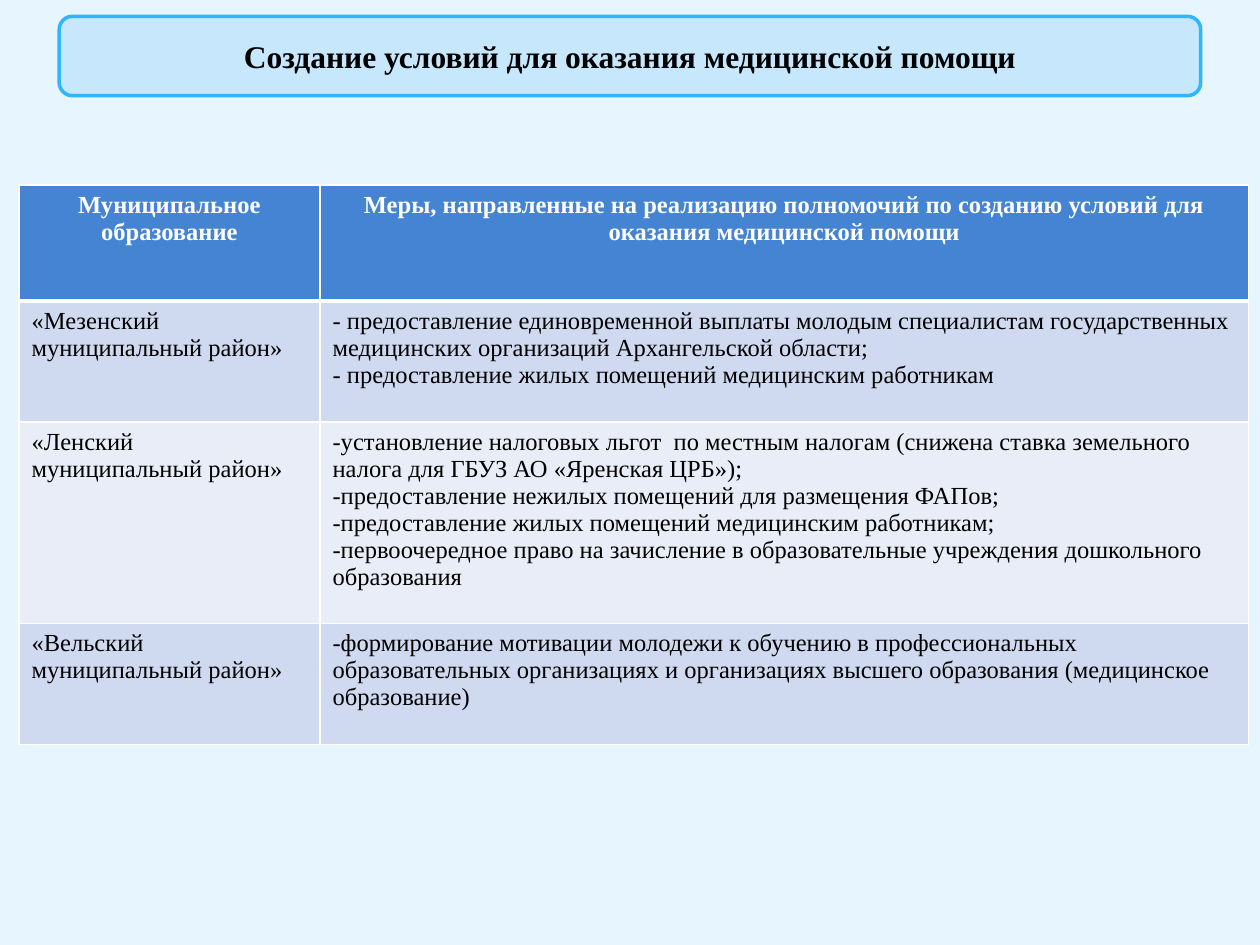
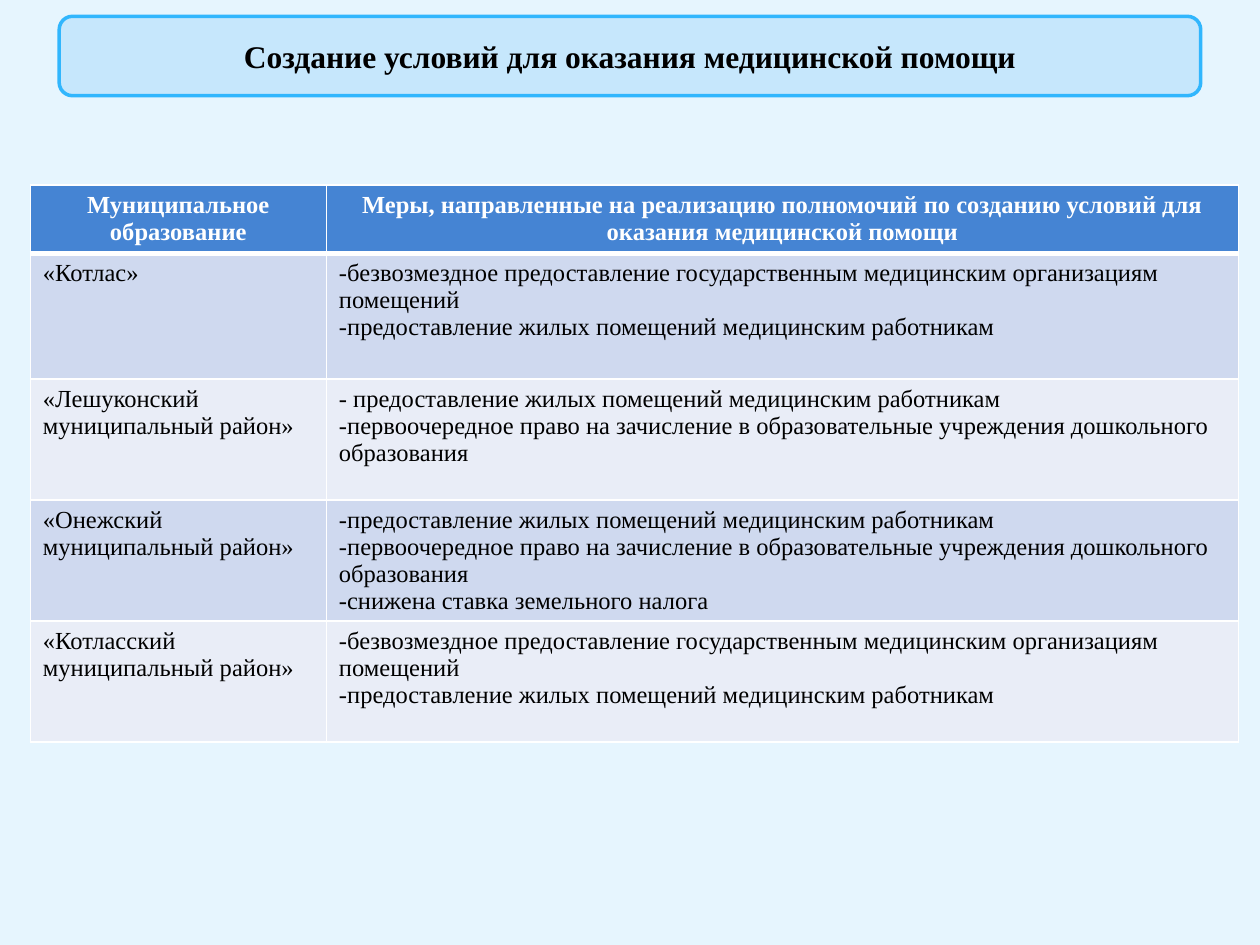
from lxml import etree
from pptx import Presentation
from pptx.dml.color import RGBColor
from pptx.enum.shapes import MSO_SHAPE
from pptx.enum.text import MSO_ANCHOR, MSO_AUTO_SIZE, PP_ALIGN
from pptx.oxml.ns import qn
from pptx.util import Inches, Pt

ROUNDED = MSO_SHAPE.ROUNDED_RECTANGLE
MIDDLE = MSO_ANCHOR.MIDDLE
NO_FIT = MSO_AUTO_SIZE.NONE
CENTER = PP_ALIGN.CENTER
LEFT = PP_ALIGN.LEFT
TITLE_ONLY = 5

TITLE = "Создание условий для оказания медицинской помощи"
HEADERS = [
    "Муниципальное образование",
    "Меры, направленные на реализацию полномочий по созданию условий для оказания медицинской помощи",
]
HOUSING = "предоставление жилых помещений медицинским работникам"
KINDERGARTEN = "-первоочередное право на зачисление в образовательные учреждения дошкольного образования"
PREMISES = "-безвозмездное предоставление государственным медицинским организациям помещений"

SLIDES = [
    {
        "left": 0.15,
        "widths": [2.39, 7.37],
        "heights": [0.92, 0.96, 1.6, 0.96],
        "measures": {
            "«Мезенский муниципальный район»": [
                "- предоставление единовременной выплаты молодым специалистам государственных медицинских организаций Архангельской области;",
                "- " + HOUSING,
            ],
            "«Ленский муниципальный район»": [
                "-установление налоговых льгот  по местным налогам (снижена ставка земельного налога для ГБУЗ АО «Яренская ЦРБ»);",
                "-предоставление нежилых помещений для размещения ФАПов;",
                "-" + HOUSING + ";",
                KINDERGARTEN,
            ],
            "«Вельский муниципальный район»": [
                "-формирование мотивации молодежи к обучению в профессиональных образовательных организациях и организациях высшего образования (медицинское образование)",
            ],
        },
    },
    {
        "left": 0.24,
        "widths": [2.35, 7.24],
        "heights": [0.54, 1, 0.96, 0.96, 0.96],
        "measures": {
            "«Котлас»": [PREMISES, "-" + HOUSING],
            "«Лешуконский муниципальный район»": ["- " + HOUSING, KINDERGARTEN],
            "«Онежский муниципальный район»": [
                "-" + HOUSING,
                KINDERGARTEN,
                "-снижена ставка земельного налога",
            ],
            "«Котласский муниципальный район»": [PREMISES, "-" + HOUSING],
        },
    },
]


def color(value):
    return RGBColor.from_string(value)


class Deck:
    font = "Times New Roman"
    background = "E6F5FE"
    panel_fill = "C6E7FC"
    panel_line = "31B6FD"
    header_fill = "4584D3"
    band_fills = ["CFD9EF", "E9EDF7"]
    white = "FFFFFF"
    black = "000000"

    def __init__(self):
        self.presentation = Presentation()
        self.presentation.slide_width = Inches(10)
        self.presentation.slide_height = Inches(7.5)
        fill = self.presentation.slide_master.background.fill
        fill.solid()
        fill.fore_color.rgb = color(self.background)
        self.slide = None

    def add_slide(self):
        layout = self.presentation.slide_layouts[TITLE_ONLY]
        self.slide = self.presentation.slides.add_slide(layout)

    def add_text(self, frame, lines, size, text_color, bold=False, alignment=LEFT):
        for index, line in enumerate(lines):
            paragraph = frame.paragraphs[0] if index == 0 else frame.add_paragraph()
            paragraph.alignment = alignment
            run = paragraph.add_run()
            run.text = line
            run.font.name = self.font
            run.font.size = Pt(size)
            run.font.bold = bold
            run.font.color.rgb = color(text_color)

    def add_title(self, text):
        box = [Inches(value) for value in (0.47, 0.13, 9.06, 0.63)]
        panel = self.slide.shapes.add_shape(ROUNDED, *box)
        panel.shadow.inherit = False
        panel.fill.solid()
        panel.fill.fore_color.rgb = color(self.panel_fill)
        panel.line.color.rgb = color(self.panel_line)
        panel.line.width = Pt(2)
        title = self.slide.shapes.title
        title.left, title.top, title.width, title.height = box
        title.text_frame.auto_size = NO_FIT
        title.text_frame.word_wrap = True
        title.text_frame.vertical_anchor = MIDDLE
        self.add_text(title.text_frame, [text], 18, self.black, True, CENTER)
        panel.element.addnext(title.element)

    def add_borders(self, cell, bottom_width):
        properties = cell._tc.get_or_add_tcPr()
        for side, width in zip("LRTB", (1, 1, 1, bottom_width)):
            line = etree.SubElement(properties, qn("a:ln" + side), w=str(Pt(width)))
            fill = etree.SubElement(line, qn("a:solidFill"))
            etree.SubElement(fill, qn("a:srgbClr"), val=self.white)

    def fill_cell(self, cell, lines, row):
        is_header = row == 0
        self.add_borders(cell, 3 if is_header else 1)
        cell.fill.solid()
        fill = self.header_fill if is_header else self.band_fills[(row - 1) % 2]
        cell.fill.fore_color.rgb = color(fill)
        self.add_text(
            cell.text_frame,
            lines,
            14,
            self.white if is_header else self.black,
            is_header,
            CENTER if is_header else LEFT,
        )

    def add_measures_table(self, left, widths, heights, measures):
        rows = [[[header] for header in HEADERS]]
        rows += [[[district], lines] for district, lines in measures.items()]
        table = self.slide.shapes.add_table(
            len(rows), len(widths), Inches(left), Inches(1.47),
            Inches(sum(widths)), Inches(sum(heights)),
        ).table
        for column, width in zip(table.columns, widths):
            column.width = Inches(width)
        for index, (height, cells) in enumerate(zip(heights, rows)):
            table.rows[index].height = Inches(height)
            for column, lines in enumerate(cells):
                self.fill_cell(table.cell(index, column), lines, index)


def main():
    deck = Deck()
    for content in SLIDES:
        deck.add_slide()
        deck.add_measures_table(**content)
        deck.add_title(TITLE)
    deck.presentation.save("out.pptx")


if __name__ == "__main__":
    main()
